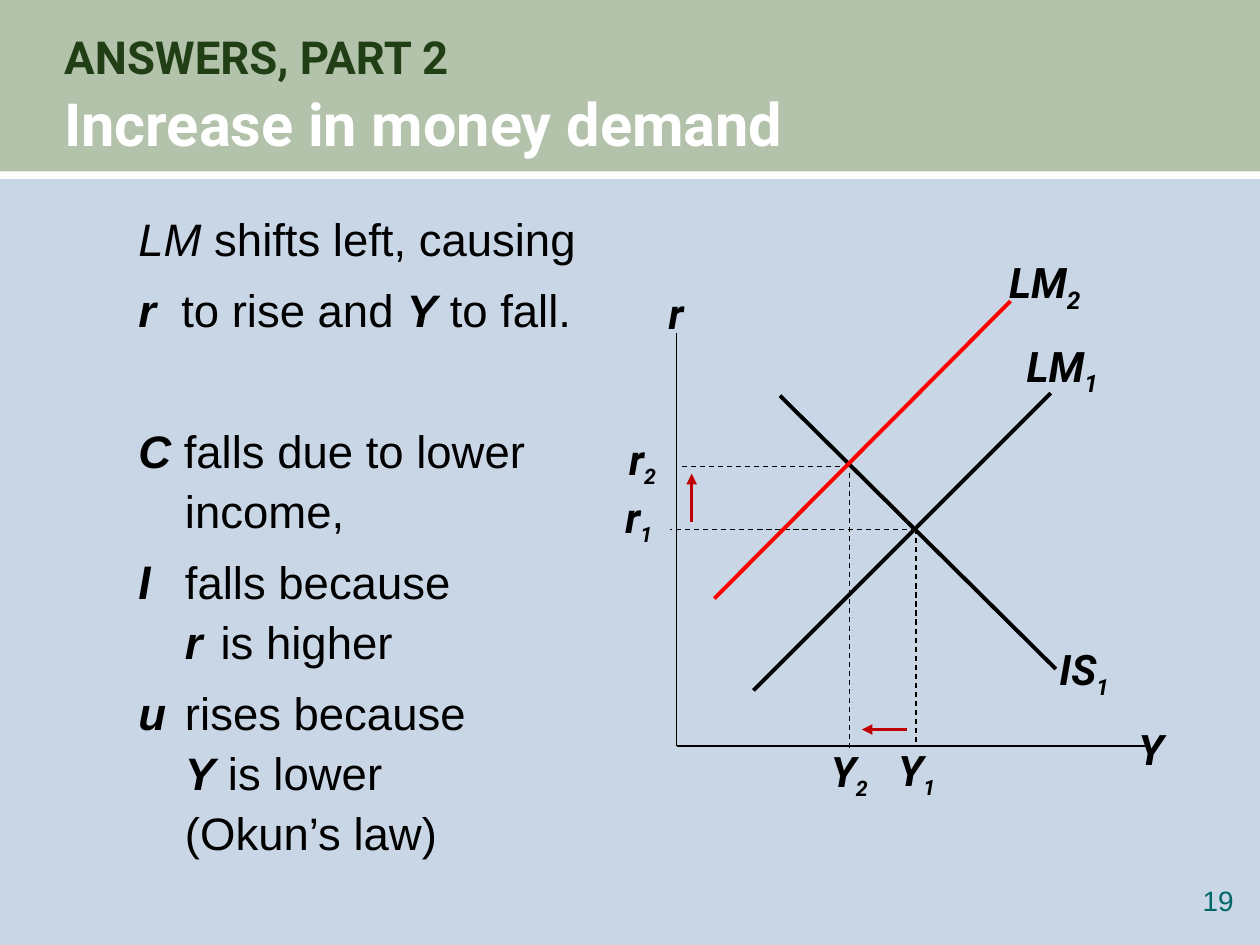
from lxml.etree import SubElement
from pptx import Presentation
from pptx.dml.color import RGBColor
from pptx.enum.dml import MSO_LINE
from pptx.enum.shapes import MSO_CONNECTOR, MSO_SHAPE
from pptx.enum.text import MSO_ANCHOR, PP_ALIGN
from pptx.oxml.ns import qn
from pptx.util import Inches, Pt

BLACK, WHITE, RED, DARK_RED = "000000", "FFFFFF", "FF0000", "C00000"
SKY, SAGE, FOREST, TEAL = "C9D6E5", "B3C2AA", "203F15", "006666"
LEFT, CENTER, RIGHT = PP_ALIGN.LEFT, PP_ALIGN.CENTER, PP_ALIGN.RIGHT
BOLD_ITALIC = dict(bold=True, italic=True)

# Content: each paragraph is a list of (text, format); "\n" is a line break
TITLE = [[("ANSWERS, PART 2\n", dict(size=26, color=FOREST)),
          ("Increase in money demand", dict(size=34, color=WHITE))]]

EFFECTS = [  # hanging indent, space before, spans
    (0.32, 6.5, [("LM", dict(italic=True)), (" shifts left, causing", {})]),
    (0.32, 6.5, [("r", BOLD_ITALIC), ("  to rise and ", {}),
                 ("Y", BOLD_ITALIC), (" to fall.", {})]),
    (0.37, 46, [("C", BOLD_ITALIC), (" falls due to lower income,", {})]),
    (0.37, 6.5, [("I", dict(BOLD_ITALIC, font="Roboto")),
                 (" \tfalls because \n", {}), ("r", BOLD_ITALIC),
                 (" ", dict(size=11)), (" is higher", {})]),
    (0.37, 6.5, [("u", BOLD_ITALIC), (" \trises because \n", {}),
                 ("Y", BOLD_ITALIC), (" is lower \n(Okun’s law)", {})]),
]

# Graph geometry: axis corner and the two equilibria
AXIS_X, AXIS_Y = 5.37, 5.92
Y1, R1 = 7.27, 4.2
Y2, R2 = 6.74, 3.7

LINES = [  # start, end, format
    ((6.19, 3.14), (8.38, 5.31), dict(width=2.25)),                  # IS1
    ((AXIS_X, 2.64), (AXIS_X, AXIS_Y), dict(width=1)),               # r axis
    ((AXIS_X, AXIS_Y), (9.09, AXIS_Y), dict(width=1)),               # Y axis
    ((5.98, 5.48), (8.34, 3.12), dict(width=2.25)),                  # LM1
    ((Y1, R1), (5.32, R1), dict(dashed=True)),
    ((Y1, R1), (Y1, 5.91), dict(dashed=True)),
    ((Y2, 3.75), (Y2, 5.94), dict(dashed=True)),
    ((Y2, R2), (5.38, R2), dict(dashed=True)),
    ((7.2, 5.79), (6.84, 5.79), dict(width=2, color=DARK_RED, arrow=True)),
    ((5.49, 4.14), (5.49, 3.76), dict(width=2, color=DARK_RED, arrow=True)),
    ((5.67, 4.75), (8.02, 2.39), dict(width=2.25, color=RED)),       # LM2
]

LABELS = [  # letters, subscript, subscript size, place, alignment
    ("IS", "1", 22, (8.31, 5.06, 0.75, 0.5), LEFT),
    ("Y", "", 24, (8.82, 5.69, 0.63, 0.5), CENTER),
    ("r", "", 24, (5.14, 2.23, 0.45, 0.5), CENTER),
    ("LM", "1", 24, (8.05, 2.65, 0.85, 0.5), LEFT),
    ("r", "1", 21, (4.75, 3.85, 0.64, 0.56), CENTER),
    ("Y", "1", 21, (6.9, 5.86, 0.75, 0.56), CENTER),
    ("Y", "2", 21, (6.45, 5.87, 0.58, 0.57), CENTER),
    ("r", "2", 21, (4.85, 3.39, 0.5, 0.5), CENTER),
    ("LM", "2", 24, (7.91, 1.99, 0.85, 0.51), LEFT),
]


def rgb(value):
    return RGBColor.from_string(value)


def add_span(para, text, font="Arial", size=26, color=BLACK,
             bold=False, italic=False, subscript=False):
    for index, piece in enumerate(text.split("\n")):
        if index:
            para.add_line_break()
        if not piece:
            continue
        span = para.add_run()
        span.text = piece
        span.font.name, span.font.size = font, Pt(size)
        span.font.bold, span.font.italic = bold, italic
        span.font.color.rgb = rgb(color)
        if subscript:
            span._r.get_or_add_rPr().set("baseline", "-25000")


def add_text(page, place, paragraphs, align=LEFT, anchor=MSO_ANCHOR.TOP,
             insets=(0.1, 0.05, 0.1, 0.05), spacing=None, **style):
    box = page.shapes.add_textbox(*map(Inches, place))
    frame = box.text_frame
    frame.word_wrap, frame.vertical_anchor = True, anchor
    (frame.margin_left, frame.margin_top,
     frame.margin_right, frame.margin_bottom) = map(Inches, insets)
    for index, spans in enumerate(paragraphs):
        para = frame.paragraphs[0] if index == 0 else frame.add_paragraph()
        para.alignment, para.line_spacing = align, spacing
        for text, own in spans:
            add_span(para, text, **{**style, **own})
    return frame


def add_band(page, place, color):
    band = page.shapes.add_shape(MSO_SHAPE.RECTANGLE, *map(Inches, place))
    band.shadow.inherit = False
    band.fill.solid()
    band.fill.fore_color.rgb = rgb(color)
    band.line.fill.background()


def add_line(page, start, end, width=0.75, color=BLACK, dashed=False, arrow=False):
    line = page.shapes.add_connector(MSO_CONNECTOR.STRAIGHT,
                                     *map(Inches, start + end))
    line.line.width = Pt(width)
    line.line.color.rgb = rgb(color)
    if dashed:
        line.line.dash_style = MSO_LINE.DASH
    if arrow:
        SubElement(line.line._get_or_add_ln(), qn("a:tailEnd"), type="triangle")
    SubElement(line._element.spPr, qn("a:effectLst"))


def main():
    deck = Presentation()
    deck.slide_width, deck.slide_height = Inches(10), Inches(7.5)
    page = deck.slides.add_slide(deck.slide_layouts[6])
    page.background.fill.solid()
    page.background.fill.fore_color.rgb = rgb(SKY)

    # Header and slide number
    add_band(page, (0, -0.01, 10, 1.41), SAGE)
    add_band(page, (0, 1.36, 10, 0.06), WHITE)
    add_text(page, (0.51, 0.22, 9.02, 1.03), TITLE, anchor=MSO_ANCHOR.MIDDLE,
             insets=(0, 0, 0, 0), spacing=1.05, font="Roboto", bold=True)
    add_text(page, (9.24, 7.01, 0.55, 0.32), [[("19", {})]], align=RIGHT,
             insets=(0, 0, 0, 0), size=16, color=TEAL)

    # IS-LM graph
    for start, end, style in LINES:
        add_line(page, start, end, **style)
    for letters, number, size, place, align in LABELS:
        spans = [(letters, {})]
        if number:
            spans.append((number, dict(size=size, subscript=True)))
        add_text(page, place, [spans], align=align,
                 font="Roboto", size=24, **BOLD_ITALIC)

    # Effects with hanging indents
    frame = add_text(page, (1, 1.58, 3.64, 5.67), [row[2] for row in EFFECTS],
                     insets=(0.1, 0.05, 0, 0.05), spacing=1.1)
    for para, (indent, before, _) in zip(frame.paragraphs, EFFECTS):
        para.space_before = Pt(before)
        props = para._p.get_or_add_pPr()
        props.set("marL", str(Inches(indent)))
        props.set("indent", str(-Inches(indent)))

    deck.save("out.pptx")


if __name__ == "__main__":
    main()
